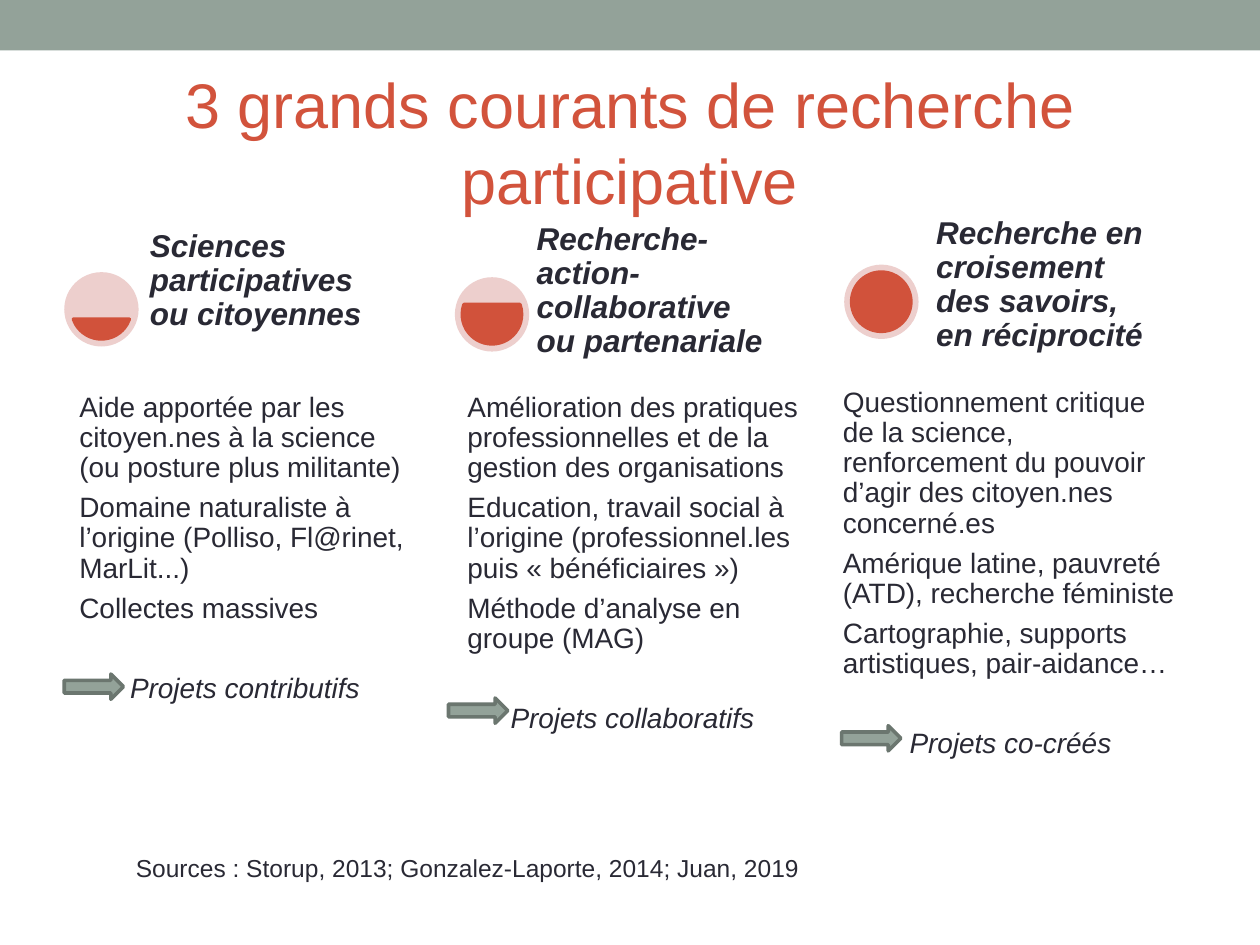
from dataclasses import dataclass

from pptx import Presentation, util as u
from pptx.dml.color import RGBColor
from pptx.enum import shapes, text


@dataclass(frozen=True)
class Theme:
    font: str = "Arial"
    ink: str = "292934"
    accent: str = "D2533C"
    gauge: str = "D1523B"
    gauge_back: str = "EDCFCD"
    sage: str = "93A299"
    sage_dark: str = "6B766F"
    title: int = 36
    heading: int = 18
    body: int = 16
    source: int = 14
    outline: float = 2.08


COLUMNS, ROWS = 100, 75
DISC, RIM = 5.9, 0.6

# Boxes are (left, top, width, height) in grid columns and rows.
CURRENTS = [
    dict(
        heading="Sciences participatives ou citoyennes", heading_box=(11.4, 21, 19.4, 5.9),
        disc=(5.1, 21.6), level=(11.683, 96.317),
        points=["Aide apportée par les citoyen.nes à la science (ou posture plus militante)",
                "Domaine naturaliste à l’origine (Polliso, Fl@rinet, MarLit...)",
                "Collectes massives"],
        projects="Projets contributifs ", body_box=(5.9, 30.8, 27.7, 29.8), arrow=(5.1, 53.5)),
    dict(
        heading="Recherche-action-collaborative ou partenariale", heading_box=(42.1, 20.2, 19.3, 8.8),
        disc=(36.1, 22), level=(204.317, 119.683),
        points=["Amélioration des pratiques professionnelles et de la gestion des organisations",
                "Education, travail social à l’origine (professionnel.les puis « bénéficiaires »)",
                "Méthode d’analyse en groupe (MAG)"],
        projects="Projets collaboratifs ", body_box=(36.7, 30.8, 27.6, 30.9), arrow=(35.6, 55.4)),
    dict(
        heading="Recherche en croisement des savoirs, en réciprocité", heading_box=(73.8, 19.4, 17.5, 9.1),
        disc=(67, 21), level=(162, 162),
        points=["Questionnement critique de la science, renforcement du pouvoir d’agir des citoyen.nes concerné.es",
                "Amérique latine, pauvreté (ATD), recherche féministe",
                "Cartographie, supports artistiques, pair-aidance…"],
        projects="Projets co-créés", body_box=(66.5, 30.4, 27.4, 35.4), arrow=(66.8, 57.6)),
]


class SlideBuilder:
    def __init__(self, deck, theme):
        self.theme = theme
        self.column = deck.slide_width / COLUMNS
        self.row = deck.slide_height / ROWS
        self.slide = deck.slides.add_slide(deck.slide_layouts[6])

    def place(self, box):
        left, top, width, height = box
        return [u.Emu(round(size)) for size in (
            left * self.column, top * self.row, width * self.column, height * self.row)]

    def shape(self, kind, box, fill, line=None, adjustments=()):
        item = self.slide.shapes.add_shape(kind, *self.place(box))
        item.shadow.inherit = False
        item.fill.solid()
        item.fill.fore_color.rgb = RGBColor.from_string(fill)
        if line:
            item.line.color.rgb = RGBColor.from_string(line)
            item.line.width = u.Pt(self.theme.outline)
        else:
            item.line.fill.background()
        for index, value in enumerate(adjustments):
            item.adjustments[index] = value

    def text(self, box, paragraphs, margins, anchor=text.MSO_ANCHOR.TOP, **font):
        """Add a box of (wording, paragraph format, font format) paragraphs."""
        frame = self.slide.shapes.add_textbox(*self.place(box)).text_frame
        side, edge = map(u.Inches, margins)
        self.apply(frame, dict(word_wrap=True, vertical_anchor=anchor, margin_left=side,
                               margin_right=side, margin_top=edge, margin_bottom=edge))
        for index, (wording, layout, emphasis) in enumerate(paragraphs):
            paragraph = frame.paragraphs[0] if index == 0 else frame.add_paragraph()
            self.apply(paragraph, layout)
            run = paragraph.add_run()
            run.text = wording
            style = dict(name=self.theme.font, color=self.theme.ink) | font | emphasis
            run.font.color.rgb = RGBColor.from_string(style.pop("color"))
            style["size"] = u.Pt(style["size"])
            self.apply(run.font, style)

    @staticmethod
    def apply(target, formats):
        for name, value in formats.items():
            setattr(target, name, value)

    def gauge(self, corner, level):
        """Draw a disc filled up to the chord given by its two angles."""
        left, top = corner
        theme, inner = self.theme, DISC - 2 * RIM
        self.shape(shapes.MSO_SHAPE.OVAL, (left, top, DISC, DISC), theme.gauge_back)
        self.shape(shapes.MSO_SHAPE.CHORD, (left + RIM, top + RIM, inner, inner),
                   theme.gauge, theme.gauge, level)

    def current(self, heading, heading_box, disc, level, points, projects, body_box, arrow):
        theme = self.theme
        tight = dict(line_spacing=0.9)
        self.gauge(disc, level)
        body = [(point, tight | dict(space_before=u.Pt(5.6 if index else 0)), {})
                for index, point in enumerate(points)]
        body.append((projects, tight | dict(space_before=u.Pt(28.4), alignment=text.PP_ALIGN.CENTER),
                     dict(italic=True)))
        self.text(body_box, body, (0.04, 0.04), size=theme.body)
        self.text(heading_box, [(heading, tight, {})], (0.05, 0.05), text.MSO_ANCHOR.BOTTOM,
                  size=theme.heading, bold=True, italic=True)
        self.shape(shapes.MSO_SHAPE.RIGHT_ARROW, (*arrow, 4.7, 2), theme.sage, theme.sage_dark)


def main():
    deck = Presentation()
    deck.slide_width, deck.slide_height = u.Inches(10), u.Inches(7.5)
    theme = Theme()
    builder = SlideBuilder(deck, theme)
    builder.shape(shapes.MSO_SHAPE.RECTANGLE, (0, 0, COLUMNS, 4), theme.sage)
    builder.text((2, 5.8, 96, 10.8),
                 [("3 grands courants de recherche participative",
                   dict(alignment=text.PP_ALIGN.CENTER), {})],
                 (0.1, 0.05), text.MSO_ANCHOR.MIDDLE, size=theme.title, color=theme.accent)
    for current in CURRENTS:
        builder.current(**current)
    builder.text((9.8, 67.2, 55.4, 3.4),
                 [("Sources : Storup, 2013; Gonzalez-Laporte, 2014; Juan, 2019", {}, {})],
                 (0.1, 0.05), size=theme.source)
    deck.save("out.pptx")


if __name__ == "__main__":
    main()
